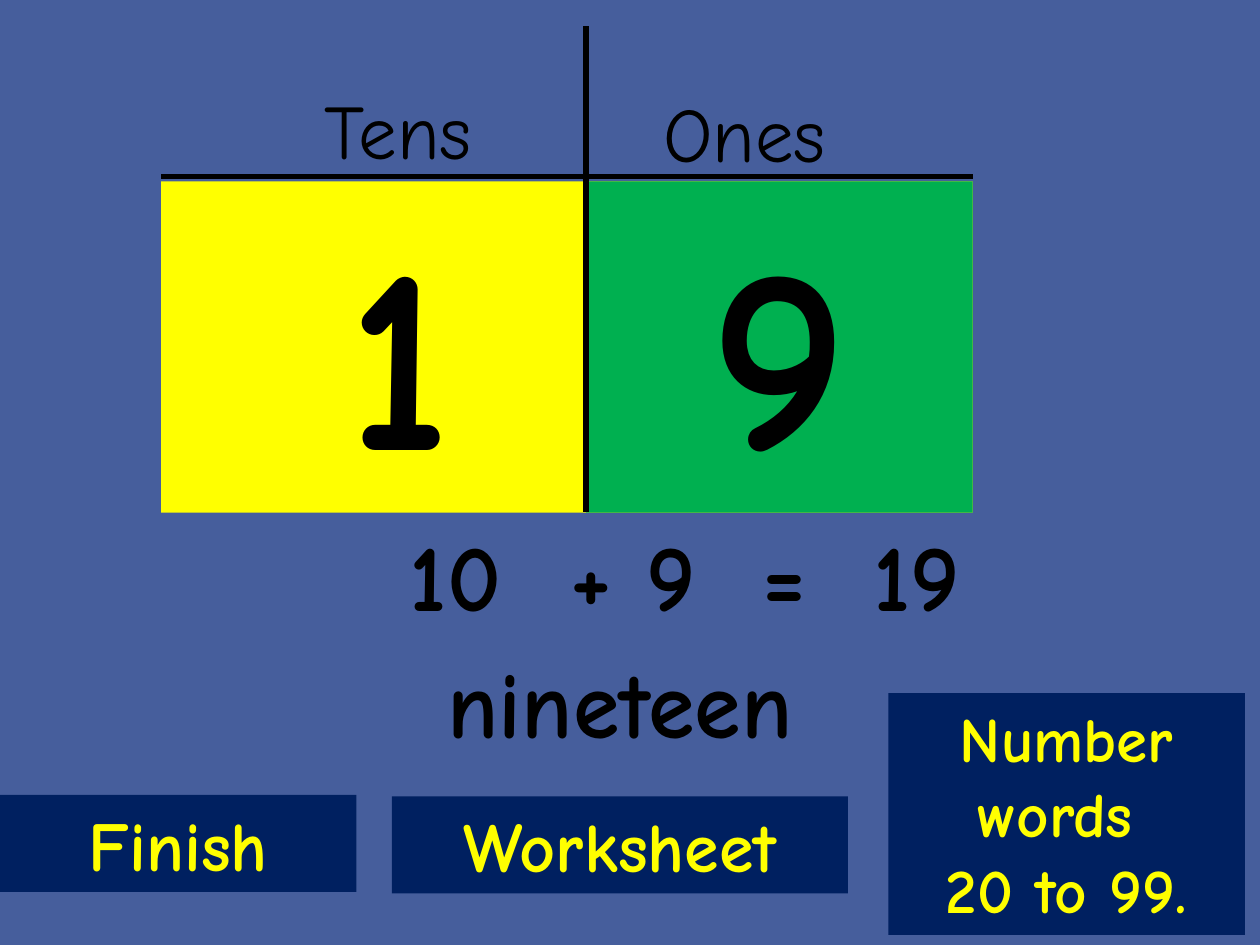
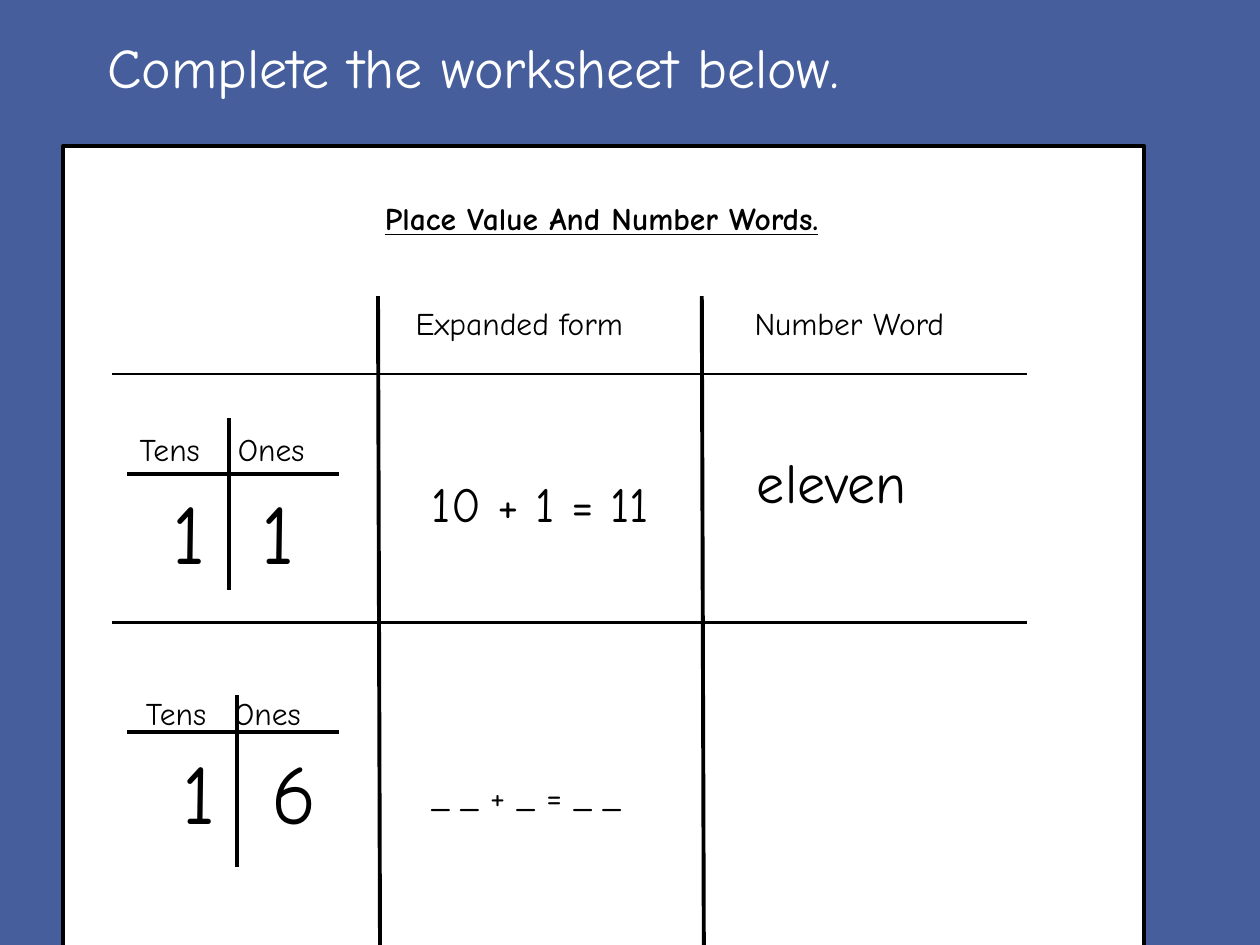
from pptx import Presentation
from pptx.dml.color import RGBColor
from pptx.enum.shapes import MSO_CONNECTOR as Connector, MSO_SHAPE as Shape
from pptx.enum.text import MSO_ANCHOR as Anchor, MSO_AUTO_SIZE as AutoSize, PP_ALIGN as Align
from pptx.oxml.ns import qn
from pptx.util import Inches, Pt
from lxml import etree

FONT = "Comic Neue"
BLUE, NAVY, YELLOW, GREEN = "465E9C", "002060", "FFFF00", "00B050"
BLACK, WHITE = "000000", "FFFFFF"
TITLE_ONLY = 5


def color(value):
    return RGBColor.from_string(value)


class Deck:
    """Holds the shared style and the current slide."""

    def __init__(self):
        self.presentation = Presentation()
        self.presentation.slide_width = Inches(10)
        self.presentation.slide_height = Inches(7.5)
        background = self.presentation.slide_master.background.fill
        background.solid()
        background.fore_color.rgb = color(BLUE)
        self.slide = None

    def new_slide(self):
        layout = self.presentation.slide_layouts[TITLE_ONLY]
        self.slide = self.presentation.slides.add_slide(layout)

    def set_text(self, shape, text, size, ink=BLACK, bold=False, underline=False,
                 align=Align.CENTER, anchor=Anchor.TOP, left_inset=0.1,
                 right_inset=0.1, top_inset=0.05, tab=None):
        frame = shape.text_frame
        frame.text = text
        frame.word_wrap = True
        frame.auto_size = AutoSize.NONE
        frame.vertical_anchor = anchor
        frame.margin_left, frame.margin_right = Inches(left_inset), Inches(right_inset)
        frame.margin_top = Inches(top_inset)
        for paragraph in frame.paragraphs:
            paragraph.alignment = align
            font = paragraph.font
            font.name, font.size, font.bold = FONT, Pt(size), bold
            font.underline = underline
            font.color.rgb = color(ink)
            if tab:
                stops = etree.Element(qn("a:tabLst"))
                etree.SubElement(stops, qn("a:tab"), pos=str(Inches(tab)), algn="l")
                paragraph._p.pPr.find(qn("a:defRPr")).addprevious(stops)

    def title(self, box, text, size, **style):
        shape = self.slide.shapes.title
        shape.left, shape.top, shape.width, shape.height = map(Inches, box)
        self.set_text(shape, text, size, **style)

    def text(self, box, text, size, **style):
        shape = self.slide.shapes.add_textbox(*map(Inches, box))
        self.set_text(shape, text, size, **style)

    def cell(self, box, text, size, **style):
        self.text(box, text, size, align=Align.LEFT, anchor=Anchor.MIDDLE, **style)

    def rectangle(self, box, fill, outline=None):
        shape = self.slide.shapes.add_shape(Shape.RECTANGLE, *map(Inches, box))
        shape.shadow.inherit = False
        shape.fill.solid()
        shape.fill.fore_color.rgb = color(fill)
        if outline:
            shape.line.color.rgb = color(BLACK)
            shape.line.width = Pt(outline)
        else:
            shape.line.fill.background()
        return shape

    def card(self, box, fill, text, size, **style):
        self.set_text(self.rectangle(box, fill), text, size, bold=True, **style)

    def line(self, x1, y1, x2, y2, width):
        connector = self.slide.shapes.add_connector(
            Connector.STRAIGHT, *map(Inches, (x1, y1, x2, y2)))
        connector.line.color.rgb = color(BLACK)
        connector.line.width = Pt(width)
        etree.SubElement(connector._element.spPr, qn("a:effectLst"))


def build_nineteen(deck):
    deck.new_slide()

    # Place value chart
    deck.title((2.17, 0.4, 1.98, 1.25), "Tens", 44, anchor=Anchor.MIDDLE)
    deck.text((4.92, 0.42, 1.98, 1.25), "Ones", 44, anchor=Anchor.MIDDLE)
    deck.line(1.28, 1.4, 7.72, 1.4, 3)
    deck.card((1.28, 1.44, 6.44, 2.63), YELLOW, "1", 150, right_inset=2.76)
    deck.card((4.65, 1.44, 3.07, 2.63), GREEN, "9", 150)
    deck.line(4.65, 0.21, 4.65, 4.06, 3)

    # Number word and sum
    deck.text((2.56, 5.06, 4.72, 1.01), "nineteen", 54, bold=True)
    deck.text((2.79, 4.05, 1.65, 1.01), "10", 54, bold=True)
    deck.text((4.2, 4.05, 1.65, 1.01), "+ 9", 54, bold=True)
    deck.text((5.62, 4.05, 2.45, 1.01), "=\t19", 54, bold=True,
              align=Align.LEFT, left_inset=0.43, tab=0.88)

    # Buttons
    for box, label, size in (
            ((0, 6.31, 2.83, 0.77), "Finish", 40),
            ((3.11, 6.32, 3.62, 0.77), "Worksheet", 40),
            ((7.05, 5.5, 2.83, 1.92), "Number words \n20 to 99.", 36)):
        deck.card(box, NAVY, label, size, ink=YELLOW)


def build_worksheet(deck):
    deck.new_slide()
    deck.title((0.75, 0.21, 7.1, 0.64), "Complete the worksheet below.", 32,
               ink=WHITE, align=Align.LEFT)

    # Sheet and its grid
    deck.rectangle((0.5, 1.16, 8.58, 7.24), WHITE, outline=2)
    for y in (2.97, 4.94):
        deck.line(0.89, y, 8.15, y, 1.5)
    for x in (3, 5.57):
        deck.line(x, 2.35, x + 0.02, 8.7, 2.25)

    # Headings
    deck.text((2.67, 1.51, 4.21, 0.71), "Place Value And Number Words.", 18,
              bold=True, underline=True, top_inset=0.07)
    deck.cell((3.2, 2.06, 2.27, 1.01), "Expanded form", 18)
    deck.cell((5.89, 2.06, 1.94, 1.01), "Number Word", 18)

    # Small place value charts: stem x and top, bar y, label box and tab, digits
    for stem_x, stem_top, bar_y, label_box, label_tab, digits_box, digits in (
            (1.82, 3.32, 3.76, (1.01, 3.06, 1.94, 1.01), 0.78,
             (1.27, 3.46, 1.94, 1.51), "1\t1"),
            (1.88, 5.52, 5.81, (1.06, 5.15, 1.59, 1.01), 0.7,
             (1.35, 5.52, 1.94, 1.51), "1\t6")):
        deck.line(stem_x, stem_top, stem_x, stem_top + 1.36, 2.25)
        deck.line(1.01, bar_y, 2.69, bar_y, 2.25)
        deck.cell(label_box, "Tens\tOnes", 18, tab=label_tab)
        deck.cell(digits_box, digits, 48, tab=0.71)

    # Answers
    deck.cell((5.91, 2.96, 1.94, 1.72), "eleven", 32)
    deck.cell((3.33, 3.24, 2.24, 1.51), "10 + 1 = 11", 28)
    deck.cell((3.33, 5.76, 1.94, 1.11), "_ _ + _ = _ _", 20)


def main():
    deck = Deck()
    build_nineteen(deck)
    build_worksheet(deck)
    deck.presentation.save("out.pptx")


if __name__ == "__main__":
    main()
